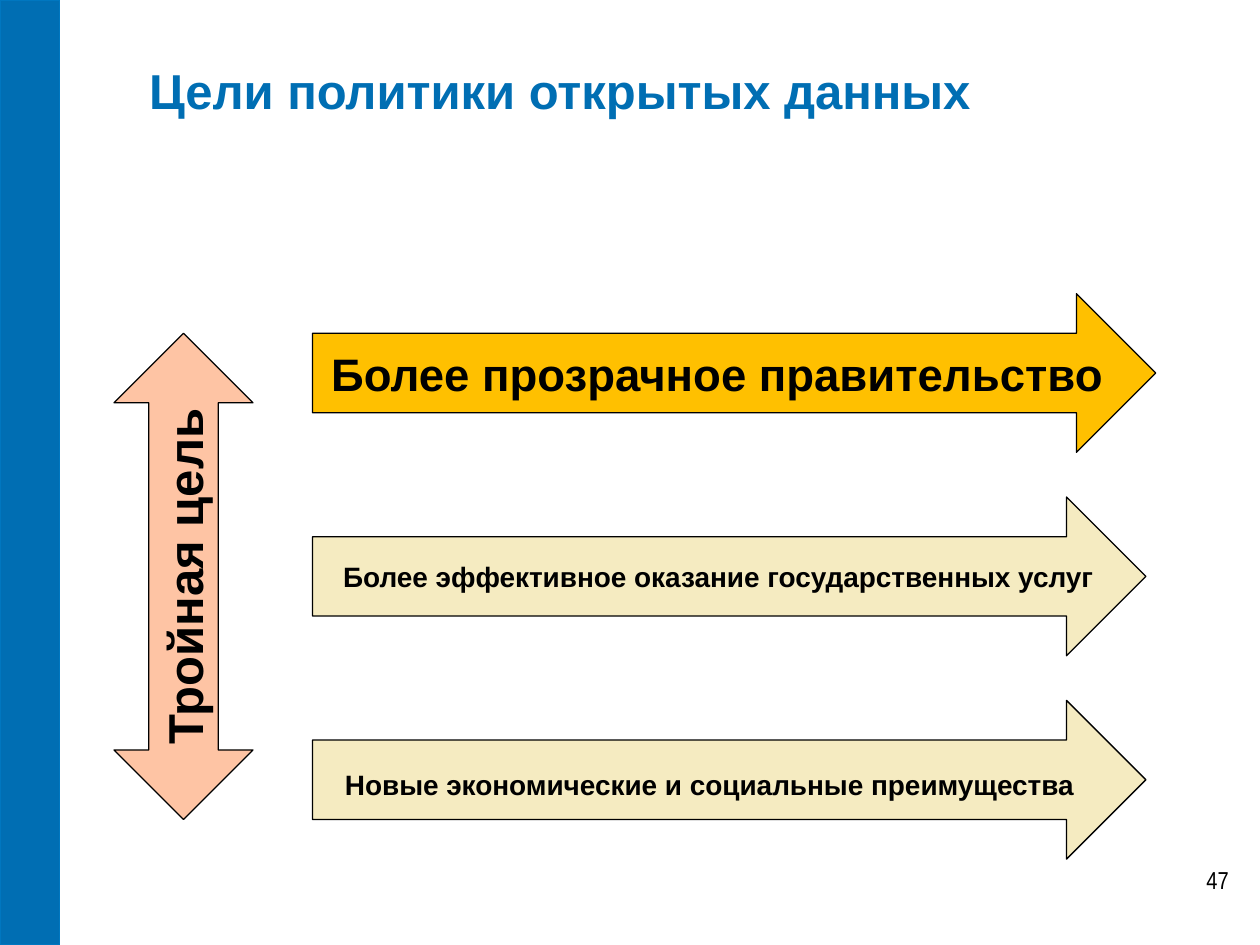
from dataclasses import dataclass

from pptx import Presentation
from pptx.dml.color import RGBColor
from pptx.enum.shapes import MSO_SHAPE as Preset
from pptx.enum.text import MSO_ANCHOR as Anchor, PP_ALIGN as Align
from pptx.shapes.autoshape import Shape
from pptx.slide import Slide
from pptx.text.text import TextFrame
from pptx.util import Cm, Pt

BLUE = "006EB3"
BLACK = "000000"
GOALS_LEFT = 6.3
GOALS_TOP = 5.92
GOALS_PITCH = 4.1
GOAL_HEIGHT = 3.2


@dataclass
class Box:
    left: float
    top: float
    width: float
    height: float

    def lengths(self) -> tuple:
        return Cm(self.left), Cm(self.top), Cm(self.width), Cm(self.height)


@dataclass
class Goal:
    wording: str
    width: float
    fill: str
    size: int
    right_inset: float = 0.25
    top_inset: float = 0.13


GOALS = [
    Goal("Более прозрачное правительство", 17, "FFC000", 26),
    Goal("Более эффективное оказание государственных услуг", 16.8, "F5EBC1", 16),
    Goal("Новые экономические и социальные преимущества", 16.8, "F5EBC1", 16, 0.64, 0.3),
]


def color(value: str) -> RGBColor:
    return RGBColor.from_string(value)


def write(frame: TextFrame, wording: str, size: int, align: Align,
          ink: str = BLACK, bold: bool = True, face: str = "Arial") -> None:
    frame.text = wording
    paragraph = frame.paragraphs[0]
    paragraph.alignment = align
    font = paragraph.runs[0].font
    font.name = face
    font.size = Pt(size)
    font.bold = bold
    font.color.rgb = color(ink)


def draw_shape(slide: Slide, preset: Preset, box: Box, fill: str, line: str = BLACK) -> Shape:
    shape = slide.shapes.add_shape(preset, *box.lengths())
    shape.shadow.inherit = False
    shape.fill.solid()
    shape.fill.fore_color.rgb = color(fill)
    shape.line.color.rgb = color(line)
    shape.line.width = Pt(0.75)
    return shape


def draw_goal(slide: Slide, goal: Goal, row: int) -> None:
    box = Box(GOALS_LEFT, GOALS_TOP + row * GOALS_PITCH, goal.width, GOAL_HEIGHT)
    frame = draw_shape(slide, Preset.RIGHT_ARROW, box, goal.fill).text_frame
    frame.word_wrap = False
    frame.vertical_anchor = Anchor.MIDDLE
    frame.margin_right = Cm(goal.right_inset)
    frame.margin_top = Cm(goal.top_inset)
    write(frame, goal.wording, goal.size, Align.RIGHT)


def draw_triple_goal(slide: Slide) -> None:
    box = Box(2.3, 6.72, 2.8, 9.8)
    frame = draw_shape(slide, Preset.UP_DOWN_ARROW, box, "FEC4A4").text_frame
    frame.word_wrap = False
    frame.vertical_anchor = Anchor.MIDDLE
    frame._txBody.bodyPr.set("vert", "vert270")
    write(frame, "Тройная цель", 28, Align.CENTER)


def place_title(slide: Slide) -> None:
    title = slide.shapes.title
    title.left, title.top, title.width, title.height = Box(2.75, 1.07, 20.95, 1.47).lengths()
    title.text_frame.vertical_anchor = Anchor.MIDDLE
    write(title.text_frame, "Цели политики открытых данных", 28, Align.LEFT, BLUE)


def place_page_number(slide: Slide) -> None:
    page_number = slide.shapes.add_textbox(*Box(19.1, 17.32, 5.92, 1.32).lengths())
    page_number.text_frame.word_wrap = True
    write(page_number.text_frame, "47", 14, Align.RIGHT, bold=False, face="Arial Narrow")


def main() -> None:
    deck = Presentation()
    deck.slide_width, deck.slide_height = Cm(25.4), Cm(19.05)
    slide = deck.slides.add_slide(deck.slide_layouts[5])
    draw_shape(slide, Preset.RECTANGLE, Box(0, 0, 1.2, 19.05), BLUE, "0077C0")
    place_title(slide)
    for row, goal in enumerate(GOALS):
        draw_goal(slide, goal, row)
    place_page_number(slide)
    draw_triple_goal(slide)
    deck.save("out.pptx")


if __name__ == "__main__":
    main()
